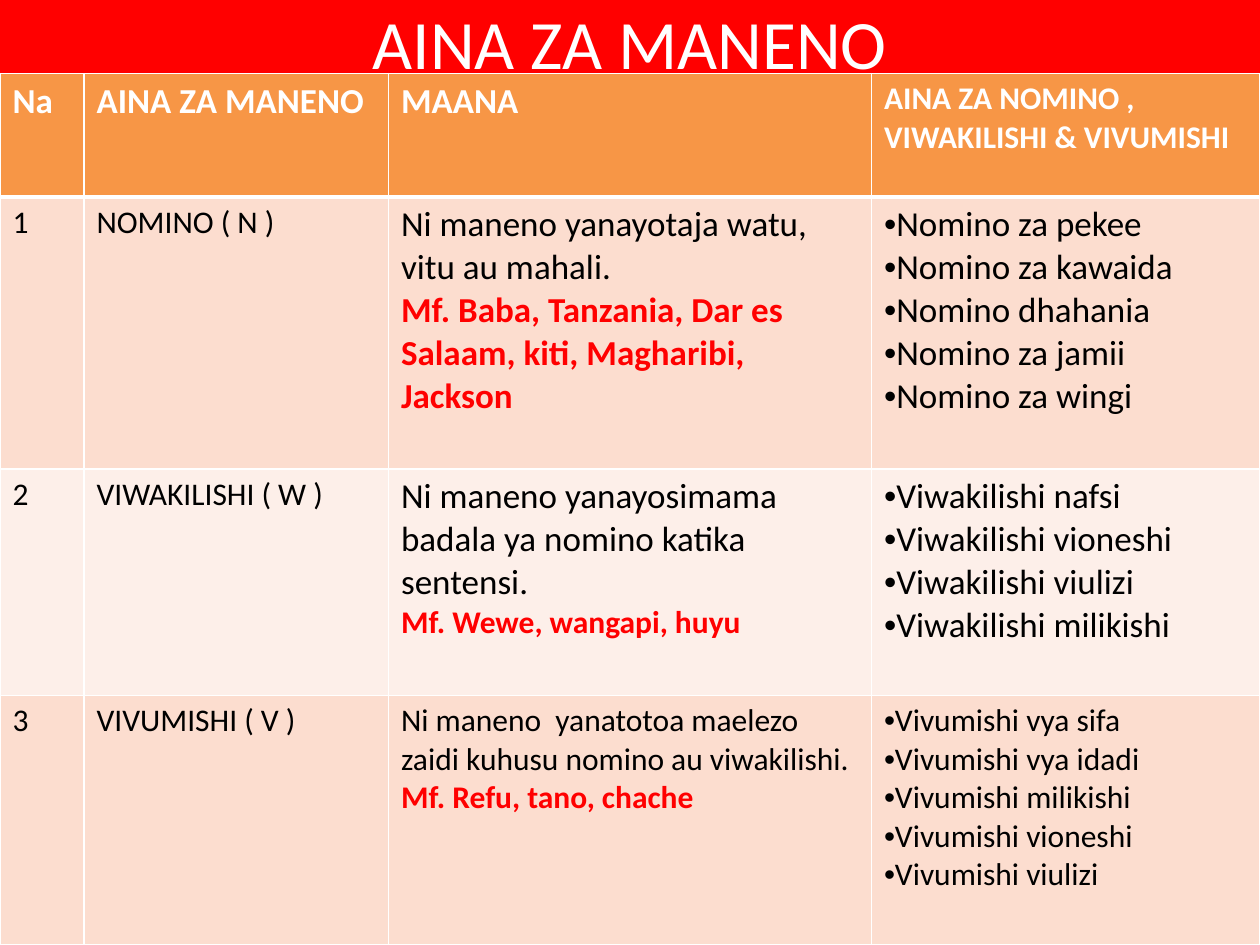
from dataclasses import dataclass

from lxml import etree
from pptx import Presentation
from pptx.dml.color import RGBColor
from pptx.enum import text
from pptx.oxml import ns
from pptx.util import Pt

FONT = "Calibri"
COLORS = {
    "white": "FFFFFF",
    "black": "000000",
    "red": "FF0000",
    "header": "F79646",
    "dark_band": "FCDDCF",
    "light_band": "FDEFE9",
}
COLUMN_WIDTHS = [48, 174, 276, 222]
ROW_HEIGHTS = [70.5, 155.5, 129.5, 142.5]
TABLE_TOP = 42


@dataclass
class Line:
    """One paragraph of a cell."""
    words: str
    size: float = 18
    color: str = "black"
    bold: bool = False
    bullet: bool = False


@dataclass
class WordClass:
    name: str
    meaning: str
    example: str
    kinds: list[str]
    size: float = 20
    example_size: float = 18


HEADINGS = [
    Line("Na", 20, "white", True),
    Line("AINA ZA MANENO", 20, "white", True),
    Line("MAANA", 20, "white", True),
    Line("AINA ZA NOMINO , VIWAKILISHI & VIVUMISHI", 18, "white", True),
]
WORD_CLASSES = [
    WordClass(
        "NOMINO ( N )",
        "Ni maneno yanayotaja watu, vitu au mahali.",
        "Mf. Baba, Tanzania, Dar es Salaam, kiti, Magharibi, Jackson",
        ["Nomino za pekee", "Nomino za kawaida", "Nomino dhahania",
         "Nomino za jamii", "Nomino za wingi"],
        example_size=20,
    ),
    WordClass(
        "VIWAKILISHI ( W )",
        "Ni maneno yanayosimama badala ya nomino katika sentensi.",
        "Mf. Wewe, wangapi, huyu",
        ["Viwakilishi nafsi", "Viwakilishi vioneshi", "Viwakilishi viulizi",
         "Viwakilishi milikishi"],
    ),
    WordClass(
        "VIVUMISHI ( V )",
        "Ni maneno  yanatotoa maelezo zaidi kuhusu nomino au viwakilishi.",
        "Mf. Refu, tano, chache",
        ["Vivumishi vya sifa", "Vivumishi vya idadi", "Vivumishi milikishi",
         "Vivumishi vioneshi", "Vivumishi viulizi"],
        size=18,
    ),
]


def rgb(name: str) -> RGBColor:
    return RGBColor.from_string(COLORS[name])


def write_line(paragraph, line: Line) -> None:
    paragraph.text = line.words
    for run in paragraph.runs:
        run.font.name = FONT
        run.font.size = Pt(line.size)
        run.font.bold = line.bold
        run.font.color.rgb = rgb(line.color)
    if line.bullet:
        properties = paragraph._p.get_or_add_pPr()
        etree.SubElement(properties, ns.qn("a:buFont"), typeface="Arial")
        etree.SubElement(properties, ns.qn("a:buChar"), char="•")


def add_borders(cell, top: float, bottom: float) -> None:
    properties = cell._tc.get_or_add_tcPr()
    for side, width in (("L", 1), ("R", 1), ("T", top), ("B", bottom)):
        border = etree.SubElement(properties, ns.qn(f"a:ln{side}"), w=str(Pt(width)))
        fill = etree.SubElement(border, ns.qn("a:solidFill"))
        etree.SubElement(fill, ns.qn("a:srgbClr"), val=COLORS["white"])


def fill_cell(cell, lines: list[Line], row: int) -> None:
    add_borders(cell, top=3 if row == 1 else 1, bottom=3 if row == 0 else 1)
    cell.fill.solid()
    band = "dark_band" if row % 2 else "light_band"
    cell.fill.fore_color.rgb = rgb("header" if row == 0 else band)
    frame = cell.text_frame
    for index, line in enumerate(lines):
        write_line(frame.add_paragraph() if index else frame.paragraphs[0], line)


def row_cells(number: int, item: WordClass) -> list[list[Line]]:
    return [
        [Line(str(number))],
        [Line(item.name)],
        [Line(item.meaning, item.size),
         Line(item.example, item.example_size, "red", True)],
        [Line(kind, item.size, bullet=True) for kind in item.kinds],
    ]


def add_title(slide) -> None:
    title = slide.shapes.title
    title.left, title.top, title.width, title.height = Pt(0), Pt(0), Pt(720), Pt(48)
    title.fill.solid()
    title.fill.fore_color.rgb = rgb("red")
    frame = title.text_frame
    frame.auto_size = text.MSO_AUTO_SIZE.NONE
    frame.vertical_anchor = text.MSO_ANCHOR.MIDDLE
    write_line(frame.paragraphs[0], Line("AINA ZA MANENO", 39.6, "white"))
    frame.paragraphs[0].alignment = text.PP_ALIGN.CENTER


def add_word_table(slide) -> None:
    rows = [[[heading] for heading in HEADINGS]]
    rows += [row_cells(number, item) for number, item in enumerate(WORD_CLASSES, 1)]
    table = slide.shapes.add_table(
        len(rows), len(COLUMN_WIDTHS), Pt(0), Pt(TABLE_TOP),
        Pt(sum(COLUMN_WIDTHS)), Pt(sum(ROW_HEIGHTS)),
    ).table
    for column, width in zip(table.columns, COLUMN_WIDTHS):
        column.width = Pt(width)
    for row, (height, cells) in enumerate(zip(ROW_HEIGHTS, rows)):
        table.rows[row].height = Pt(height)
        for column, lines in enumerate(cells):
            fill_cell(table.cell(row, column), lines, row)


def main() -> None:
    presentation = Presentation()
    presentation.slide_width, presentation.slide_height = Pt(720), Pt(540)
    slide = presentation.slides.add_slide(presentation.slide_layouts[5])
    add_title(slide)
    add_word_table(slide)
    presentation.save("out.pptx")


if __name__ == "__main__":
    main()
